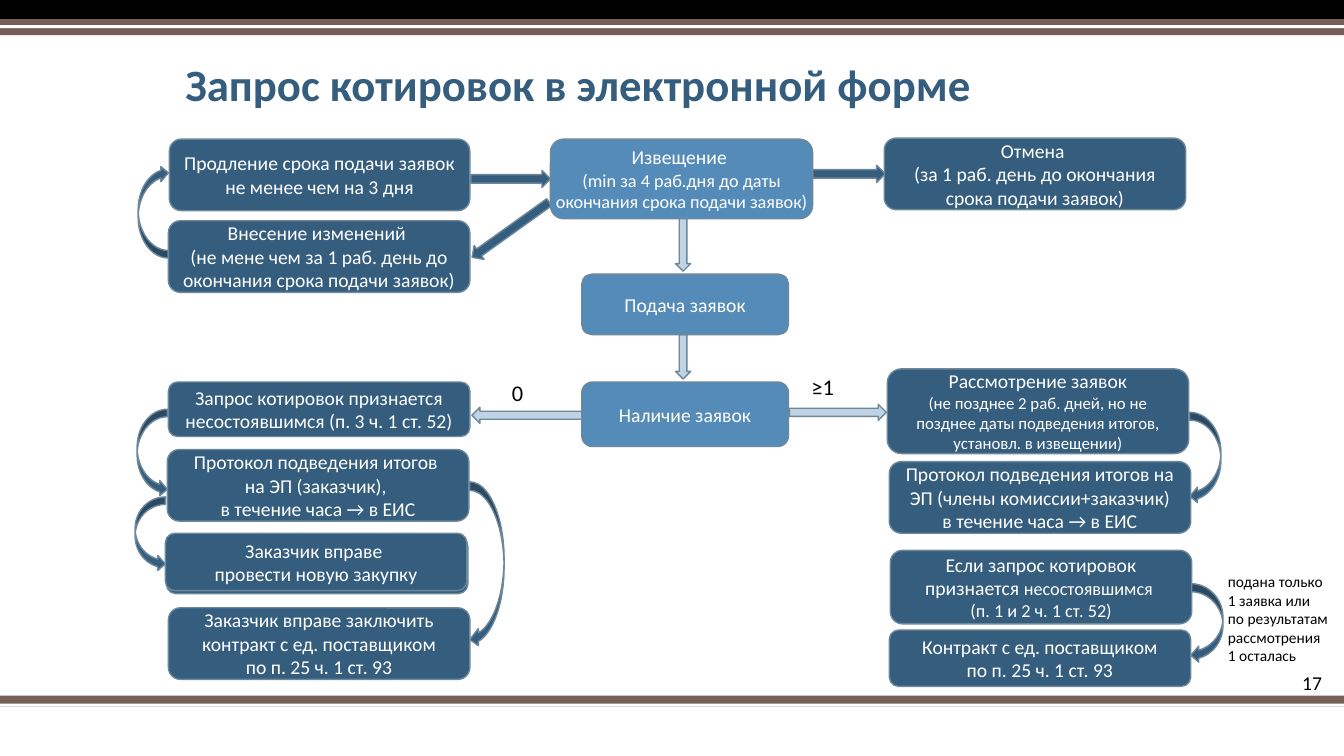
import pptx
import pptx.dml.color
import pptx.enum.shapes
import pptx.enum.text
import pptx.util

SCALE = 9144  # EMU per px, 100 px to the inch
FONT = "Calibri"
COLORS = {
    "black": "000000", "white": "FFFFFF", "brown": "775F55", "navy": "355D7E",
    "blue": "558BB8", "pale": "BFD3E4", "outline": "6D879B",
}
SHAPE = pptx.enum.shapes.MSO_SHAPE
ALIGN = pptx.enum.text.PP_ALIGN
ANCHOR = pptx.enum.text.MSO_ANCHOR

BANDS = [
    (690, 11, "brown"), (698, 3, "white"),
    (0, 19, "black"), (19, 16, "brown"), (25, 3, "white"),
]

# Left, top, width, height, fill, paragraphs as lists of (text, size)
NEW_PURCHASE = [[("Заказчик вправе ", 14)], [("провести новую закупку", 14)]]
STEPS = [
    (880, 366, 299, 84, "navy", [
        [("Рассмотрение заявок", 14)],
        [("(не позднее 2 раб. дней, но не позднее даты подведения итогов, "
          "установл. в извещении)", 12)]]),
    (882, 458, 299, 71, "navy", [
        [("Протокол подведения итогов на ЭП (члены комиссии+заказчик)", 14)],
        [("в течение часа → в ЕИС", 14)]]),
    (882, 625, 299, 56, "navy", [
        [("Контракт с ед. поставщиком", 14)], [("по п. 25 ч. 1 ст. 93", 14)]]),
    (877, 137, 299, 71, "navy", [
        [("Отмена ", 14)],
        [("(за 1 раб. день до окончания срока подачи заявок)", 14)]]),
    (167, 219, 299, 71, "navy", [
        [("Внесение изменений ", 14)],
        [("(не мене чем за 1 раб. день до окончания срока подачи заявок)", 14)]]),
    (167, 379, 299, 54, "navy", [
        [("Запрос котировок признается несостоявшимся (п. 3 ч. 1 ст. 52)", 14)]]),
    (165, 532, 299, 57, "navy", []),
    (164, 529, 299, 57, "navy", NEW_PURCHASE),
    (167, 603, 299, 71, "navy", [
        [("Заказчик вправе заключить контракт с ед. поставщиком", 14)],
        [("по п. 25 ч. 1 ст. 93", 14)]]),
    (168, 138, 298, 71, "navy", [
        [("Продление срока подачи заявок не менее чем на 3 дня", 14)]]),
    (166, 446, 299, 71, "navy", [
        [("Протокол подведения итогов \nна ЭП (заказчик), ", 14)],
        [("в течение часа → в ЕИС", 14)]]),
    (883, 546, 299, 73, "navy", [
        [("Если запрос котировок признается ", 14), ("несостоявшимся ", 13)],
        [("(п. 1 и 2 ч. 1 ст. 52)", 13)]]),
    (577, 379, 205, 64, "blue", [[("Наличие заявок", 14)]]),
    (577, 272, 205, 60, "blue", [[("Подача заявок", 14)]]),
]
NOTICE = (546, 138, 260, 79, "blue", [
    [("Извещение ", 14)],
    [("(min за 4 раб.дня до даты окончания срока подачи заявок)", 13)]])

# Preset, left, top, width, height, fill, rotation
ARROWS = [
    (SHAPE.RIGHT_ARROW, 467, 169, 79, 17, "navy", 0),
    (SHAPE.RIGHT_ARROW, 806, 164, 72, 17, "navy", 0),
    (SHAPE.DOWN_ARROW, 670, 204, 15, 65, "pale", 0),
    (SHAPE.DOWN_ARROW, 670, 332, 15, 44, "pale", 0),
    (SHAPE.DOWN_ARROW, 498, 181, 17, 94, "navy", 54.4),
    (SHAPE.CURVED_RIGHT_ARROW, 136, 406, 30, 87, "navy", 0),
    (SHAPE.CURVED_LEFT_ARROW, 466, 478, 34, 165, "navy", 0),
    (SHAPE.CURVED_LEFT_ARROW, 1180, 409, 31, 91, "navy", 0),
    (SHAPE.CURVED_LEFT_ARROW, 1181, 579, 32, 79, "navy", 0),
    (SHAPE.CURVED_LEFT_ARROW, 137, 164, 30, 92, "navy", 180),
    (SHAPE.LEFT_ARROW, 468, 404, 109, 16, "pale", 0),
    (SHAPE.LEFT_ARROW, 783, 401, 96, 16, "pale", 180),
    (SHAPE.CURVED_RIGHT_ARROW, 134, 493, 30, 74, "navy", 0),
]


def px(*lengths):
    return [pptx.util.Emu(n * SCALE) for n in lengths]


def rgb(name):
    return pptx.dml.color.RGBColor.from_string(COLORS[name])


def add_figure(s, preset, box, fill, line=None):
    sp = s.shapes.add_shape(preset, *px(*box))
    sp.shadow.inherit = False
    sp.fill.solid()
    sp.fill.fore_color.rgb = rgb(fill)
    if line:
        sp.line.color.rgb = rgb(line)
        sp.line.width = pptx.util.Pt(1)
    else:
        sp.line.fill.background()
    return sp


def write(tf, paragraphs, color, align, anchor=ANCHOR.MIDDLE):
    """Fill a frame; each paragraph takes the size of its first part."""
    tf.word_wrap = True
    tf.vertical_anchor = anchor
    for i, parts in enumerate(paragraphs):
        p = tf.add_paragraph() if i else tf.paragraphs[0]
        (text, size), *rest = parts
        p.text = text
        p.alignment = align
        p.font.name = FONT
        p.font.size = pptx.util.Pt(size)
        p.font.color.rgb = rgb(color)
        for more, more_size in rest:
            r = p.add_run()
            r.text = more
            r.font.size = pptx.util.Pt(more_size)


def add_step(s, left, top, width, height, fill, paragraphs):
    sp = add_figure(s, SHAPE.ROUNDED_RECTANGLE, (left, top, width, height),
                    fill, "outline")
    write(sp.text_frame, paragraphs, "white", ALIGN.CENTER)
    return sp


def add_arrow(s, preset, left, top, width, height, fill, rotation):
    sp = add_figure(s, preset, (left, top, width, height), fill, "outline")
    sp.rotation = rotation


def add_label(s, box, paragraphs, align=ALIGN.LEFT):
    tf = s.shapes.add_textbox(*px(*box)).text_frame
    write(tf, paragraphs, "black", align)


def add_title(s, text):
    tf = s.shapes.add_textbox(*px(174, 47, 1000, 68)).text_frame
    write(tf, [[(text, 32)]], "navy", ALIGN.LEFT, ANCHOR.BOTTOM)
    p = tf.paragraphs[0]
    p.font.bold = True
    p.line_spacing = 0.9


def main():
    prs = pptx.Presentation()
    prs.slide_width, prs.slide_height = px(1333, 750)
    s = prs.slides.add_slide(prs.slide_layouts[6])
    for top, height, fill in BANDS:
        add_figure(s, SHAPE.RECTANGLE, (0, top, 1333, height), fill)
    add_title(s, "Запрос котировок в электронной форме")
    for arrow in ARROWS:
        add_arrow(s, *arrow)
    for step in STEPS:
        add_step(s, *step)
    notice = add_step(s, *NOTICE)
    notice.text_frame.margin_left = notice.text_frame.margin_right = 0
    add_label(s, (795, 365, 63, 37), [[("≥1", 16)]])
    add_label(s, (498, 371, 63, 37), [[("0", 16)]])
    add_label(s, (1219, 665, 102, 25), [[("17", 14)]], ALIGN.RIGHT)
    add_label(s, (1208, 562, 125, 103), [
        [("подана только 1 заявка или \nпо результатам рассмотрения", 11)],
        [("1 осталась", 11)]])
    prs.save("out.pptx")


if __name__ == "__main__":
    main()
